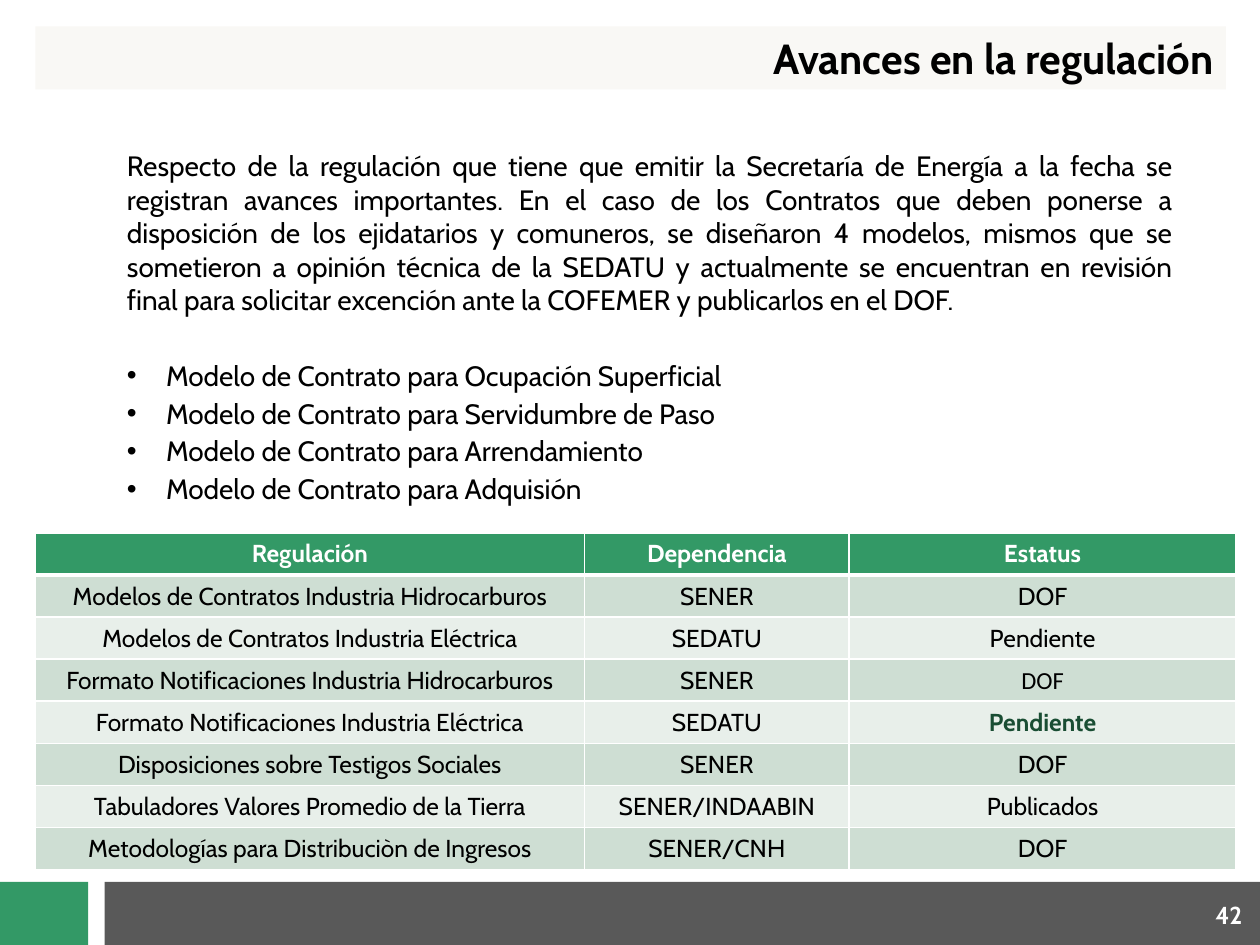
from dataclasses import dataclass

from lxml.etree import SubElement
from pptx import Presentation
from pptx.dml.color import RGBColor
from pptx.enum.shapes import MSO_SHAPE
from pptx.enum.text import MSO_ANCHOR as ANCHOR, PP_ALIGN as ALIGN
from pptx.oxml.ns import qn
from pptx.util import Inches, Pt

COLORS = {
    "green": "339966", "dark_green": "194D33", "gray": "595959",
    "cream": "F9F8F5", "band_dark": "CEDED3", "band_light": "E8EFEA",
    "white": "FFFFFF", "black": "000000",
}
FONT = "Cabin"
WIDTH, HEIGHT = Inches(10), Inches(7.5)
COLS, ROWS = 100, 75


@dataclass(frozen=True)
class Box:
    """A rectangle in columns and rows of the slide grid."""
    col: float
    row: float
    cols: float
    rows: float

    def emu(self) -> tuple[int, int, int, int]:
        x, y = WIDTH / COLS, HEIGHT / ROWS
        return (round(self.col * x), round(self.row * y),
                round(self.cols * x), round(self.rows * y))


@dataclass(frozen=True)
class Style:
    size: float
    color: str = "black"
    bold: bool = False
    font: str = FONT


@dataclass(frozen=True)
class Regulation:
    name: str
    agency: str
    status: str
    status_style: Style = Style(14)


TITLE_BOX = Box(2.8, 2.1, 94.5, 5)
BODY_BOX = Box(9.1, 11.3, 85, 29.3)
TABLE_BOX = Box(2.8, 42.3, 95.3, 26.7)
NUMBER_BOX = Box(76.3, 70.6, 23.3, 4)
FOOTER = [(Box(8.3, 70, 92.1, 5), "gray"), (Box(-0.1, 70, 7.1, 5), "green")]

COLUMN_SPANS = [43.6, 21, 30.7]
HEADERS = ["Regulación", "Dependencia", "Estatus"]
HEADER_STYLE, CELL_STYLE = Style(14, "white", True), Style(14)
REGULATIONS = [
    Regulation("Modelos de Contratos Industria Hidrocarburos", "SENER", "DOF"),
    Regulation("Modelos de Contratos Industria Eléctrica", "SEDATU", "Pendiente"),
    Regulation("Formato Notificaciones Industria Hidrocarburos", "SENER", "DOF",
               Style(14, font="Calibri")),
    Regulation("Formato Notificaciones Industria Eléctrica", "SEDATU", "Pendiente",
               Style(14, "dark_green", True)),
    Regulation("Disposiciones sobre Testigos Sociales", "SENER", "DOF"),
    Regulation("Tabuladores Valores Promedio de la Tierra", "SENER/INDAABIN",
               "Publicados"),
    Regulation("Metodologías para Distribuciòn de Ingresos", "SENER/CNH", "DOF"),
]

INTRO = (
    "Respecto de la regulación que tiene que emitir la Secretaría de Energía a la "
    "fecha se registran avances importantes. En el caso de los Contratos que deben "
    "ponerse a disposición de los ejidatarios y comuneros, se diseñaron 4 modelos, "
    "mismos que se sometieron a opinión técnica de la SEDATU y actualmente se "
    "encuentran en revisión final para solicitar excención ante la COFEMER y "
    "publicarlos en el DOF."
)
CONTRACTS = ["Ocupación Superficial", "Servidumbre de Paso", "Arrendamiento",
             "Adquisión"]
SPACING, LIST_GAP = 1.2, 22.8


def rgb(name: str) -> RGBColor:
    return RGBColor.from_string(COLORS[name])


def add_text(p, text: str, style: Style, align) -> None:
    p.alignment = align
    r = p.add_run()
    r.text = text
    r.font.size, r.font.bold, r.font.name = Pt(style.size), style.bold, style.font
    r.font.color.rgb = rgb(style.color)


def add_rect(slide, box: Box, color: str):
    sp = slide.shapes.add_shape(MSO_SHAPE.RECTANGLE, *box.emu())
    sp.shadow.inherit = False
    sp.fill.solid()
    sp.fill.fore_color.rgb = rgb(color)
    sp.line.fill.background()
    return sp


def add_text_frame(slide, box: Box, anchor):
    tf = slide.shapes.add_textbox(*box.emu()).text_frame
    tf.word_wrap, tf.vertical_anchor = True, anchor
    return tf


def set_bullet(p) -> None:
    pPr = p._p.get_or_add_pPr()
    indent = Inches(0.31)
    pPr.set("marL", str(indent))
    pPr.set("indent", str(-indent))
    SubElement(pPr, qn("a:buFont"), typeface="Arial")
    SubElement(pPr, qn("a:buChar"), char="•")


def set_borders(cell, bottom: float) -> None:
    """White borders; they must precede the fill in the cell properties."""
    tcPr = cell._tc.get_or_add_tcPr()
    for side, width in (("L", 1), ("R", 1), ("T", 1), ("B", bottom)):
        ln = SubElement(tcPr, qn(f"a:ln{side}"), w=str(Pt(width)))
        fill = SubElement(ln, qn("a:solidFill"))
        SubElement(fill, qn("a:srgbClr"), val=COLORS["white"])


def fill_cell(cell, text: str, style: Style, color: str, bottom: float) -> None:
    set_borders(cell, bottom)
    cell.fill.solid()
    cell.fill.fore_color.rgb = rgb(color)
    cell.vertical_anchor = ANCHOR.MIDDLE
    add_text(cell.text_frame.paragraphs[0], text, style, ALIGN.CENTER)


def add_regulation_table(slide) -> None:
    count = len(REGULATIONS) + 1
    table = slide.shapes.add_table(count, len(HEADERS), *TABLE_BOX.emu()).table
    for column, span in zip(table.columns, COLUMN_SPANS):
        column.width = round(span * WIDTH / COLS)
    for i, header in enumerate(HEADERS):
        fill_cell(table.cell(0, i), header, HEADER_STYLE, "green", 3)
    for row, reg in enumerate(REGULATIONS, 1):
        color = "band_dark" if row % 2 else "band_light"
        top = 3 if row == 1 else 1
        entries = [(reg.name, CELL_STYLE), (reg.agency, CELL_STYLE),
                   (reg.status, reg.status_style)]
        for i, (text, style) in enumerate(entries):
            cell = table.cell(row, i)
            fill_cell(cell, text, style, color, 1)
            cell._tc.tcPr.find(qn("a:lnT")).set("w", str(Pt(top)))
            if style.font != FONT:
                cell.margin_left = cell.margin_right = cell.margin_top = Inches(0.01)
                cell.margin_bottom = 0


def add_body(slide) -> None:
    tf = add_text_frame(slide, BODY_BOX, ANCHOR.TOP)
    style = Style(16)
    p = tf.paragraphs[0]
    p.space_after = Pt(SPACING)
    add_text(p, INTRO, style, ALIGN.JUSTIFY)
    for i, contract in enumerate(CONTRACTS):
        p = tf.add_paragraph()
        p.space_before = Pt(SPACING if i else LIST_GAP)
        p.space_after = Pt(SPACING)
        set_bullet(p)
        add_text(p, f"Modelo de Contrato para {contract}", style, ALIGN.JUSTIFY)


def main() -> None:
    prs = Presentation()
    prs.slide_width, prs.slide_height = WIDTH, HEIGHT
    slide = prs.slides.add_slide(prs.slide_layouts[6])
    for box, color in FOOTER:
        add_rect(slide, box, color)
    tf = add_rect(slide, TITLE_BOX, "cream").text_frame
    tf.word_wrap, tf.vertical_anchor = True, ANCHOR.TOP
    p = tf.paragraphs[0]
    p.space_after = Pt(SPACING)
    add_text(p, "Avances en la regulación", Style(24, bold=True), ALIGN.RIGHT)
    tf = add_text_frame(slide, NUMBER_BOX, ANCHOR.MIDDLE)
    add_text(tf.paragraphs[0], "42", HEADER_STYLE, ALIGN.RIGHT)
    add_regulation_table(slide)
    add_body(slide)
    prs.save("out.pptx")


if __name__ == "__main__":
    main()
